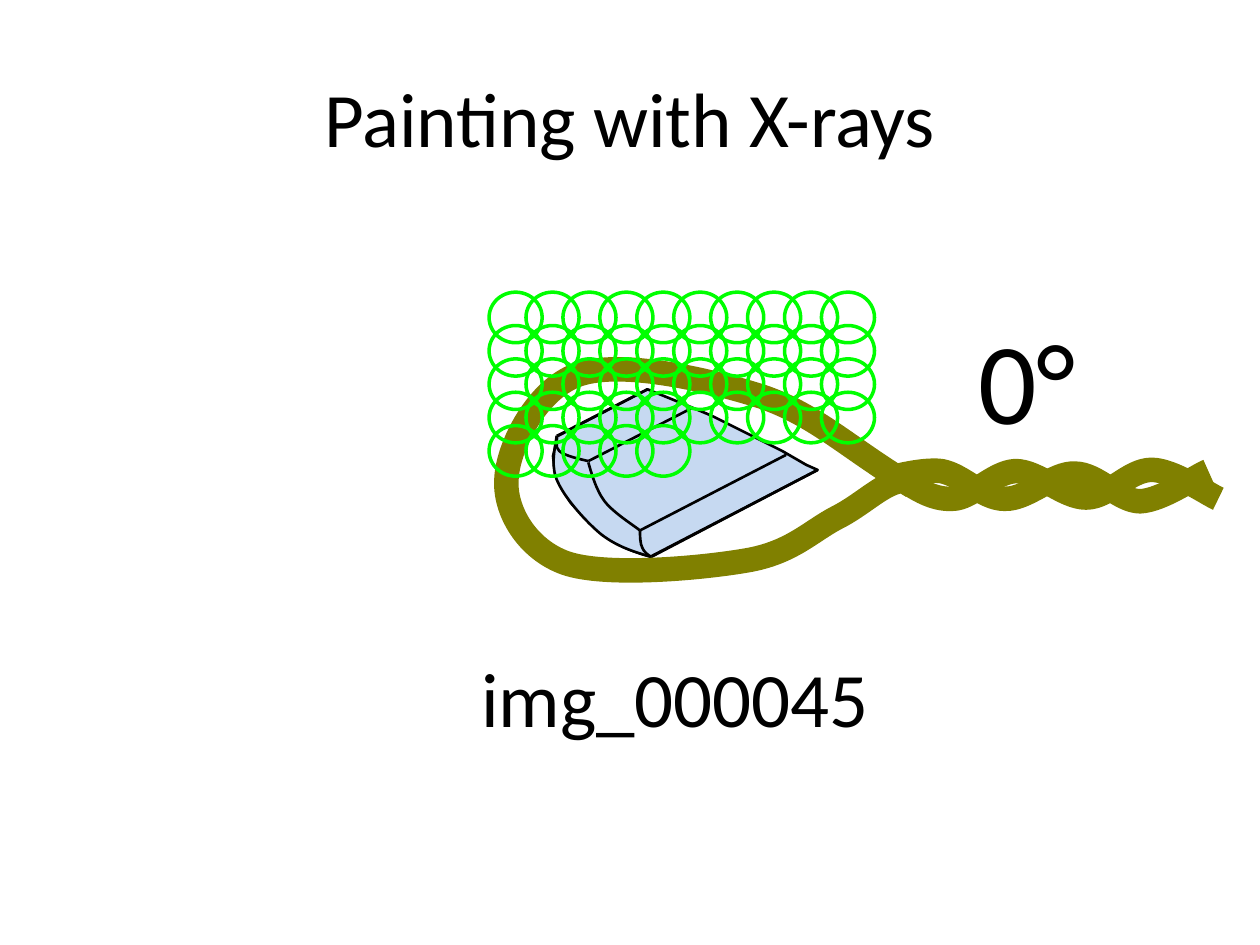
from lxml.etree import SubElement
from pptx import Presentation
from pptx.dml.color import RGBColor
from pptx.enum.shapes import MSO_CONNECTOR as Link, MSO_SHAPE as Form
from pptx.enum.text import MSO_ANCHOR as Anchor, PP_ALIGN as Align
from pptx.oxml.ns import qn
from pptx.util import Cm, Pt

BLACK = RGBColor(0x00, 0x00, 0x00)
ICE = RGBColor(0xC6, 0xD9, 0xF1)
OLIVE = RGBColor(0x80, 0x80, 0x00)
GREEN = RGBColor(0x00, 0xFF, 0x00)
UNIT = Cm(2.54) / 100
COLS, ROWS, LAST = 10, 5, 5

OUTLINE = [
    (219, 73), (87, 142), (80, 140), (69, 136), (57, 130), (46, 122), (35, 112),
    (23, 99), (16, 88), (11, 78), (10, 71), (9, 62), (11, 54), (13, 46), (84, 9),
    (111, 20), (135, 30), (161, 43), (191, 58), (210, 69),
]
EDGES = [
    ((219, 73), (86, 142)), ((194, 61), (78, 121)),
    ((119, 24), (37, 66)), ((84, 9), (12, 46)),
]
RIMS = [
    [(87, 142), (73, 138), (60, 134), (47, 124), (35, 114), (19, 96), (13, 83),
     (7, 71), (10, 58), (12, 46)],
    [(87, 142), (85, 141), (81, 138), (80, 135), (78, 132), (78, 124), (78, 121)],
    [(78, 121), (73, 117), (57, 107), (50, 98), (43, 89), (39, 74), (37, 67)],
    [(37, 66), (33, 65), (18, 62), (14, 58), (10, 55), (13, 48), (12, 46)],
]
STRANDS = [
    [(324, 106), (276, 78), (249, 50), (205, 35), (161, 21), (94, 6), (60, 17),
     (26, 28), (3, 75), (2, 100), (0, 125), (18, 156), (49, 167), (81, 178),
     (157, 171), (192, 165), (228, 159), (243, 142), (264, 131), (284, 121),
     (299, 105), (314, 102), (330, 99), (332, 100), (335, 102)],
    [(311, 97), (325, 107), (340, 117), (356, 116), (371, 116), (388, 95),
     (406, 94), (424, 94), (444, 115), (462, 115), (480, 115), (496, 93),
     (514, 93), (531, 93), (558, 112), (567, 116)],
    [(297, 101), (305, 100), (330, 92), (347, 94), (364, 97), (380, 116),
     (397, 116), (415, 117), (436, 95), (453, 96), (471, 96), (488, 118),
     (505, 118), (523, 117), (549, 98), (559, 94)],
]


def paint(shape, line, width, fill=None):
    """Set the outline and fill of a shape and drop its shadow."""
    shape.shadow.inherit = False
    shape.line.color.rgb = line
    shape.line.width = Pt(width)
    if fill is None:
        shape.fill.background()
    else:
        shape.fill.solid()
        shape.fill.fore_color.rgb = fill


def draw(shapes, left, top, points, closed=False):
    """Draw a straight-sided outline from points in local units."""
    pen = shapes.build_freeform(*points[0], scale=UNIT)
    pen.add_line_segments(points[1:], close=closed)
    return pen.convert_to_shape(left, top)


def curve(shapes, left, top, points):
    """Draw a chain of Bezier curves, three points to each curve."""
    shape = draw(shapes, left, top, points)
    steps = list(shape.element.iter(qn("a:lnTo")))
    for i in range(0, len(steps), 3):
        trio = steps[i:i + 3]
        bend = trio[0].getparent()
        cubic = SubElement(bend, qn("a:cubicBezTo"))
        for step in trio:
            cubic.append(step[0])
            bend.remove(step)
    return shape


def stone(slide, left, top):
    """Draw the faceted crystal."""
    shapes = slide.shapes.add_group_shape().shapes
    paint(draw(shapes, left, top, OUTLINE, True), BLACK, 1.5, ICE)
    for (x1, y1), (x2, y2) in EDGES:
        edge = shapes.add_connector(
            Link.STRAIGHT,
            int(left + x1 * UNIT), int(top + y1 * UNIT),
            int(left + x2 * UNIT), int(top + y2 * UNIT),
        )
        edge.line.color.rgb = BLACK
        edge.line.width = Pt(1.5)
        SubElement(edge.element.spPr, qn("a:effectLst"))
    for rim in RIMS:
        paint(curve(shapes, left, top, rim), BLACK, 1.5, ICE)


def loop(slide, left, top):
    """Draw the mounting loop with its twisted stem."""
    shapes = slide.shapes.add_group_shape().shapes
    for strand in STRANDS:
        paint(curve(shapes, left, top, strand), OLIVE, 14)


def beams(slide, left, top, width, height):
    """Fill a box with rows of overlapping beam spots, the last row partial."""
    wide, high = Cm(1.07), Cm(1.02)
    dx = (width - wide) / (COLS - 1)
    dy = (height - high) / (ROWS - 1)
    for row in range(ROWS):
        full = row < ROWS - 1
        shapes = slide.shapes.add_group_shape().shapes if full else slide.shapes
        for col in range(COLS if full else LAST):
            spot = shapes.add_shape(
                Form.OVAL, int(left + col * dx), int(top + row * dy), wide, high
            )
            paint(spot, GREEN, 2)


def style(frame, size):
    """Format every run of a text frame."""
    for para in frame.paragraphs:
        for run in para.runs:
            run.font.name = "Calibri"
            run.font.size = Pt(size)
            run.font.color.rgb = BLACK


def label(slide, left, top, width, height, text, size, inset=0.25):
    """Add a text box with a given left inset."""
    frame = slide.shapes.add_textbox(left, top, width, height).text_frame
    frame.word_wrap = True
    frame.margin_left = Cm(inset)
    frame.text = text
    style(frame, size)


def head(slide, left, top, width, height):
    """Place and format the slide title."""
    title = slide.shapes.title
    title.left, title.top, title.width, title.height = left, top, width, height
    frame = title.text_frame
    frame.text = "Painting with X-rays"
    frame.vertical_anchor = Anchor.MIDDLE
    frame.paragraphs[0].alignment = Align.CENTER
    style(frame, 44)


def main():
    """Build and save the slide."""
    deck = Presentation()
    deck.slide_width, deck.slide_height = Cm(25.4), Cm(19.05)
    slide = deck.slides.add_slide(deck.slide_layouts[5])
    head(slide, Cm(1.27), Cm(0.76), Cm(22.86), Cm(3.18))
    stone(slide, Cm(10.92), Cm(7.62))
    loop(slide, Cm(10.16), Cm(7.11))
    beams(slide, Cm(9.86), Cm(5.89), Cm(7.77), Cm(3.71))
    label(slide, Cm(18.42), Cm(6.1), Cm(4.06), Cm(3.07), "0°", 66, 1.3)
    label(slide, Cm(9.45), Cm(12.98), Cm(9.14), Cm(2.13), "img_000045", 44)
    deck.save("out.pptx")


if __name__ == "__main__":
    main()
